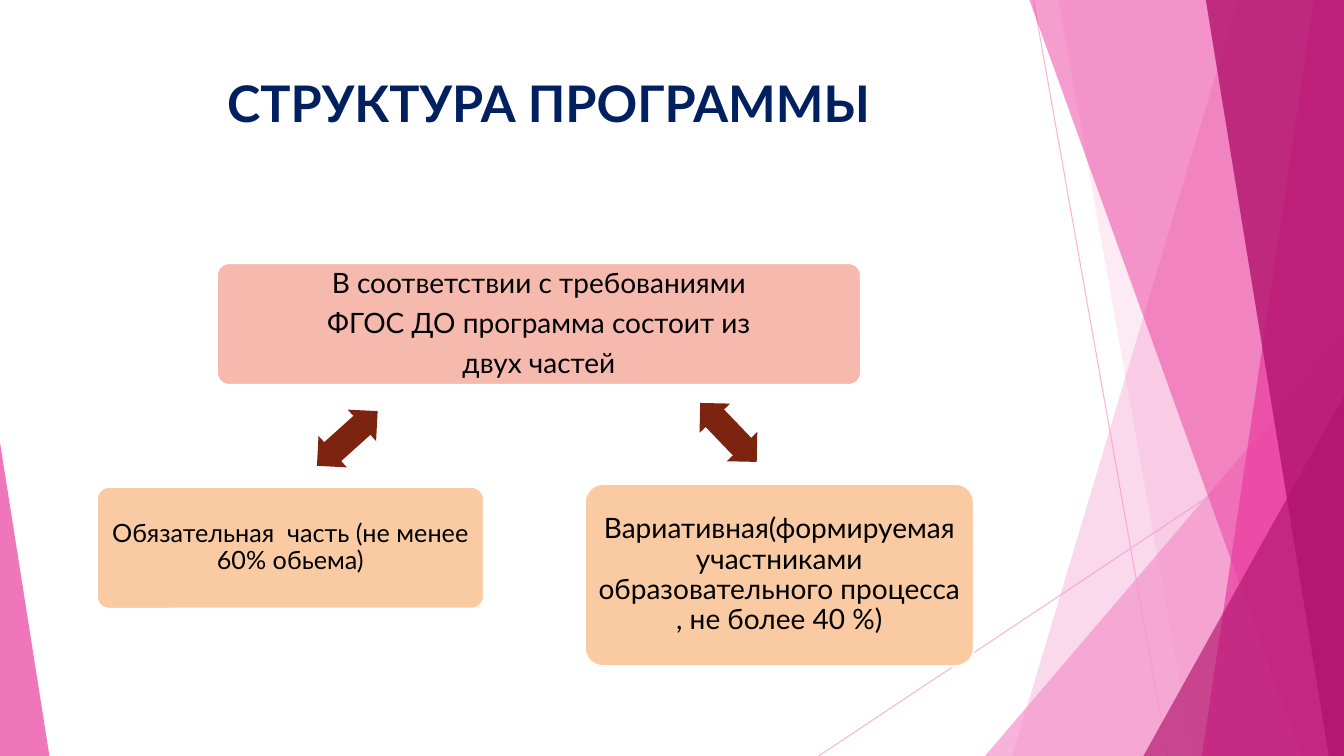
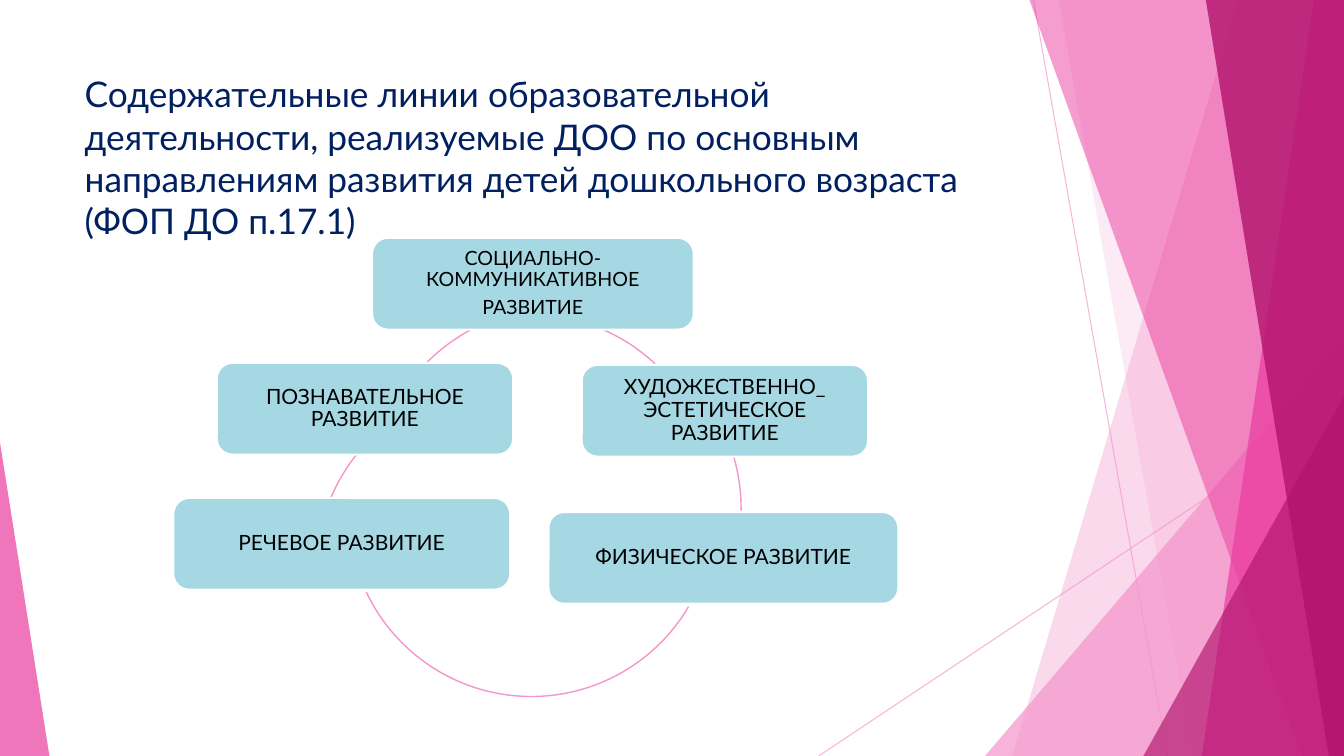
from lxml import etree
from pptx import Presentation
from pptx.dml.color import RGBColor
from pptx.enum.shapes import MSO_CONNECTOR, MSO_SHAPE
from pptx.enum.text import MSO_ANCHOR, MSO_AUTO_SIZE, PP_ALIGN
from pptx.oxml.ns import qn
from pptx.util import Inches, Pt

ROUND, ARROW = MSO_SHAPE.ROUNDED_RECTANGLE, MSO_SHAPE.LEFT_RIGHT_ARROW
ARC, TRI = MSO_SHAPE.ARC, MSO_SHAPE.ISOSCELES_TRIANGLE
LEFT, CENTER = PP_ALIGN.LEFT, PP_ALIGN.CENTER
TOP, MIDDLE = MSO_ANCHOR.TOP, MSO_ANCHOR.MIDDLE
WIDE, HIGH = 13.33, 7.5


class Theme:
    font = "Lato"
    navy, black, white = "002060", "000000", "FFFFFF"
    pale, pink, deep = "F496CB", "EB3D9F", "B2136D"
    rose, peach, brown, sky = "F5BAAD", "FACBA3", "7C240F", "A6D8E4"
    head, lead = 36, 25.2
    big, mid, text, small = 20, 18, 15, 14


# Shared decor: rays from the top edge to the foot, all reaching the right edge;
# corner triangles by left, width, height, apex
LINES = [(10.25, 0, 11.58, HIGH), (WIDE, 4.03, 8.12, HIGH)]
DECOR = [
    ("ray", (12.28, 10.04), Theme.pale, 36),
    ("ray", (10.5, 11.83), Theme.pale, 20),
    ("corner", (9.77, 3.56, 4.17, 1), Theme.pale, 72),
    ("ray", (10.21, 12.91), Theme.pink, 50),
    ("ray", (13.03, 11.92), Theme.pink, 70),
    ("ray", (11.96, 13.18), Theme.deep, 80),
    ("corner", (11.34, 1.99, 3.57, 1), Theme.deep, 66),
    ("corner", (0, 0.49, 3.11, 0), Theme.pink, 70),
]

# Slide 1: cards as box, fill, size, inset, paragraphs; arrows as left, top, turn
PLAN = "СТРУКТУРА ПРОГРАММЫ"
PARTS = [
    ((2.15, 2.61, 6.39, 1.21), Theme.rose, Theme.big, 0.08,
     ["В соответствии с требованиями", "ФГОС ДО программа состоит из",
      "двух частей"]),
    ((5.8, 4.8, 3.86, 1.81), Theme.peach, Theme.big, 0.08,
     ["Вариативная(формируемая участниками образовательного процесса"
      " , не более 40 %)"]),
    ((0.96, 4.83, 3.84, 1.21), Theme.peach, Theme.mid, 0.07,
     ["Обязательная  часть (не менее 60% обьема)"]),
]
ARROWS = [(6.82, 4.08, 46.2), (3.04, 4.14, 318)]

# Slide 2: cards as left, top, width, size, paragraphs;
# arcs as left, top, first and last angle (clockwise)
AREAS = ("Содержательные линии образовательной деятельности, реализуемые ДОО "
         "по основным направлениям развития детей дошкольного "
         "возраста (ФОП ДО п.17.1)")
FIELDS = [
    (3.69, 2.36, 3.19, Theme.small, ["СОЦИАЛЬНО-КОММУНИКАТИВНОЕ", "РАЗВИТИЕ"]),
    (5.77, 3.62, 2.84, Theme.text, ["ХУДОЖЕСТВЕННО_ ЭСТЕТИЧЕСКОЕ РАЗВИТИЕ"]),
    (5.44, 5.08, 3.47, Theme.text, ["ФИЗИЧЕСКОЕ РАЗВИТИЕ"]),
    (1.72, 4.94, 3.34, Theme.text, ["РЕЧЕВОЕ РАЗВИТИЕ"]),
    (2.15, 3.6, 2.94, Theme.text, ["ПОЗНАВАТЕЛЬНОЕ РАЗВИТИЕ"]),
]
ROW, RING = 0.91, 3.62
ARCS = [(3.45, 3.12, 293.4, 313.2), (3.73, 3.23, 343.7, 1.3),
        (3.46, 3.29, 30.5, 154.7), (3.14, 3.83, 202.7, 218.5),
        (3.71, 3.06, 224.5, 242)]


def rgb(code):
    return RGBColor.from_string(code)


def fade(shape, alpha):
    color = shape.element.spPr.find(".//" + qn("a:srgbClr"))
    etree.SubElement(color, qn("a:alpha"), val=str(alpha * 1000))


def paint(shape, fill=None, line=None, width=1.5):
    shape.shadow.inherit = False
    if fill:
        shape.fill.solid()
        shape.fill.fore_color.rgb = rgb(fill)
    else:
        shape.fill.background()
    if line:
        shape.line.color.rgb = rgb(line)
        shape.line.width = Pt(width)
    else:
        shape.line.fill.background()


def put(slide, kind, box, adjust=()):
    shape = slide.shapes.add_shape(kind, *map(Inches, box))
    for i, value in enumerate(adjust):
        shape.adjustments[i] = value
    return shape


def style(para, size, color, align, bold=False):
    para.alignment = align
    font = para.font
    font.name, font.size, font.bold = Theme.font, Pt(size), bold
    font.color.rgb = rgb(color)


def card(slide, box, fill, size, inset, lines, curve):
    shape = put(slide, ROUND, box, [curve])
    paint(shape, fill, Theme.white)
    frame = shape.text_frame
    frame.word_wrap, frame.vertical_anchor = True, MIDDLE
    frame.margin_left = frame.margin_right = Inches(inset)
    frame.margin_top = frame.margin_bottom = Inches(inset)
    frame.text = "\n".join(lines)
    for para in frame.paragraphs:
        style(para, size, Theme.black, CENTER)
        para.line_spacing = 0.9
        para.space_after = Pt(size * 0.35)


def ray(slide, top, foot):
    pen = slide.shapes.build_freeform(Inches(top), 0)
    corners = [(WIDE, 0), (WIDE, HIGH), (foot, HIGH)]
    pen.add_line_segments([(Inches(x), Inches(y)) for x, y in corners])
    return pen.convert_to_shape()


def corner(slide, left, width, height, apex):
    return put(slide, TRI, (left, HIGH - height, width, height), [apex])


def decorate(slide, layout):
    """Draw the decor and move it behind everything on the layout."""
    made = []
    for ends in LINES:
        link = slide.shapes.add_connector(MSO_CONNECTOR.STRAIGHT,
                                          *map(Inches, ends))
        link.line.color.rgb = rgb(Theme.pale)
        link.line.width = Pt(0.75)
        etree.SubElement(link.element.spPr, qn("a:effectLst"))
        fade(link, 70)
        made.append(link)
    for kind, where, color, alpha in DECOR:
        shape = {"ray": ray, "corner": corner}[kind](slide, *where)
        paint(shape, color)
        fade(shape, alpha)
        made.append(shape)
    for i, shape in enumerate(made):
        layout.shapes.element.insert(2 + i, shape.element)


def start(deck, layout, text, size, align, bold):
    slide = deck.slides.add_slide(layout)
    title = slide.shapes.title
    title.left, title.top = Inches(0.74), Inches(0.67)
    title.width, title.height = Inches(9.4), Inches(1.44)
    frame = title.text_frame
    frame.text = text
    frame.word_wrap, frame.vertical_anchor = True, TOP
    frame.auto_size = MSO_AUTO_SIZE.NONE
    style(frame.paragraphs[0], size, Theme.navy, align, bold)
    return slide


def main():
    deck = Presentation()
    deck.slide_width, deck.slide_height = Inches(WIDE), Inches(HIGH)
    layout = deck.slide_layouts[5]
    for holder in list(layout.placeholders)[1:]:
        holder.element.getparent().remove(holder.element)

    # Structure of the programme
    slide = start(deck, layout, PLAN, Theme.head, CENTER, True)
    decorate(slide, layout)
    for part in PARTS:
        card(slide, *part, curve=0.1)
    for left, top, turn in ARROWS:
        arrow = put(slide, ARROW, (left, top, 0.81, 0.42), (0.6, 0.5))
        arrow.rotation = turn
        paint(arrow, Theme.brown)

    # Ring of development areas
    slide = start(deck, layout, AREAS, Theme.lead, LEFT, False)
    for left, top, first, last in ARCS:
        # Angles count in 60000ths of a degree, adjustments in 100000ths
        arc = put(slide, ARC, (left, top, RING, RING),
                  (first * 0.6, last * 0.6))
        paint(arc, line=Theme.pale, width=1)
    for left, top, width, size, lines in FIELDS:
        card(slide, (left, top, width, ROW), Theme.sky, size, 0.06, lines,
             curve=0.17)

    deck.save("out.pptx")


if __name__ == "__main__":
    main()
